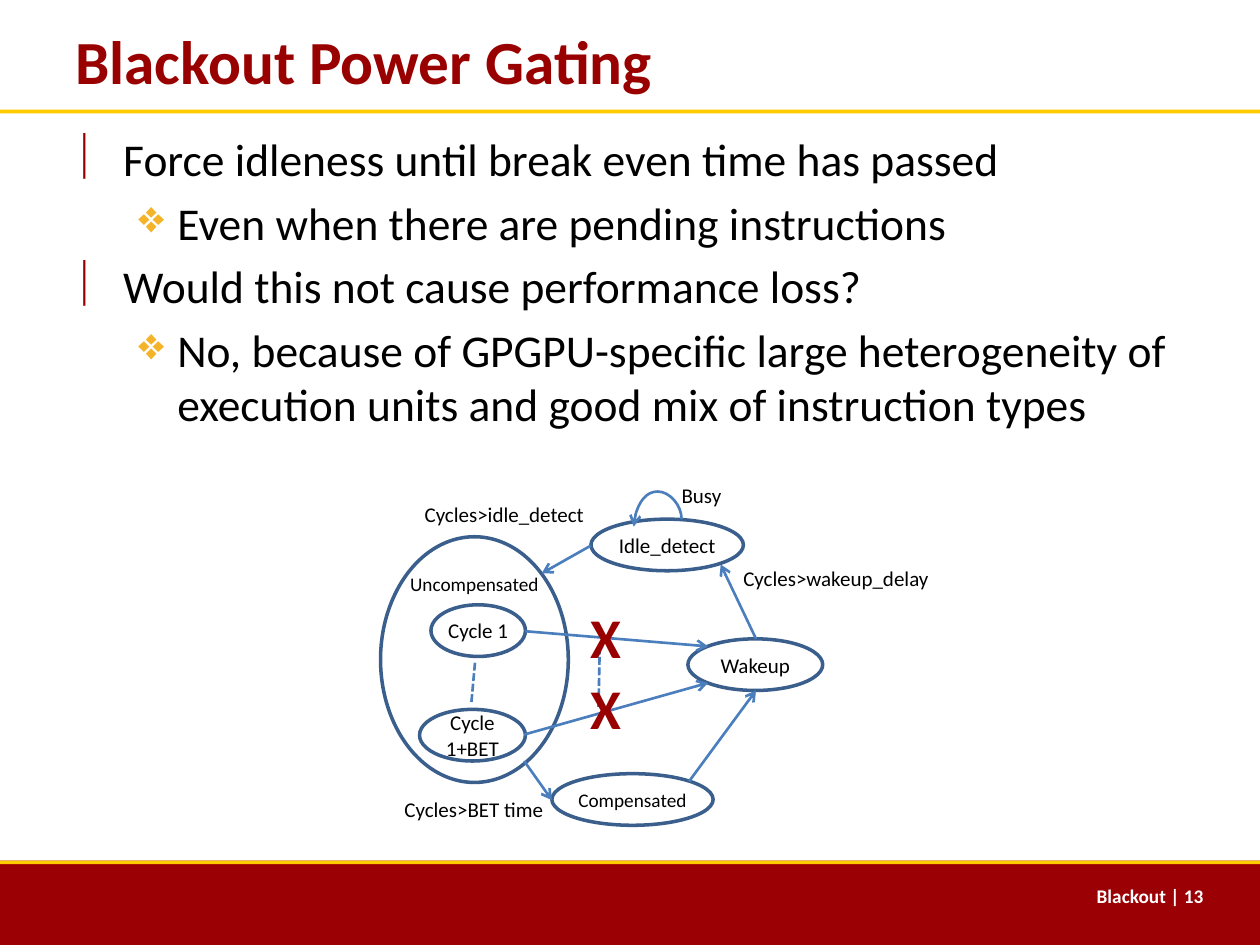
"""Build the Blackout Power Gating slide with its state diagram."""
from dataclasses import dataclass

from lxml import etree
from pptx import Presentation
from pptx.dml.color import RGBColor
from pptx.enum.dml import MSO_LINE
from pptx.enum.shapes import MSO_CONNECTOR, MSO_SHAPE
from pptx.enum.text import MSO_ANCHOR, PP_ALIGN
from pptx.oxml.ns import qn
from pptx.util import Inches, Pt

RECT, OVAL = MSO_SHAPE.RECTANGLE, MSO_SHAPE.OVAL
STRAIGHT, CURVE = MSO_CONNECTOR.STRAIGHT, MSO_CONNECTOR.CURVE
TOP, MIDDLE = MSO_ANCHOR.TOP, MSO_ANCHOR.MIDDLE
LEFT, CENTER, RIGHT = PP_ALIGN.LEFT, PP_ALIGN.CENTER, PP_ALIGN.RIGHT
DASH = MSO_LINE.SQUARE_DOT
COLS, ROWS = 100, 75


@dataclass(frozen=True)
class Theme:
    """Colours, type sizes and line widths of the slide."""
    font: str = "Calibri"
    band: str = "9A0004"
    rule: str = "FFCC00"
    accent: str = "990000"
    diamond: str = "F4B329"
    ink: str = "000000"
    paper: str = "FFFFFF"
    outline: str = "3A5F8C"
    link: str = "4B7EBC"
    title: float = 35
    cross: float = 32
    body: float = 26
    label: float = 12
    small: float = 11
    oval_width: float = 2
    link_width: float = 1.5


T = Theme()

BULLETS = [
    (0, "Force idleness until break even time has passed"),
    (1, "Even when there are pending instructions"),
    (0, "Would this not cause performance loss?"),
    (1, "No, because of GPGPU-specific large heterogeneity of "
        "execution units and good mix of instruction types"),
]
LEVELS = [("|", T.accent, 0.38, -0.38), ("❖", T.diamond, 0.81, -0.31)]

STATES = [
    ("Uncompensated", (30.2, 42.6, 14.9, 19.5), T.small, TOP),
    ("Cycle 1", (34.2, 48, 7.5, 4.1), T.label, MIDDLE),
    ("Cycle 1+BET", (33.3, 56.3, 8.4, 4.1), T.label, MIDDLE),
    ("Wakeup", (54.6, 50.7, 10.7, 4.1), T.label, MIDDLE),
    ("Compensated", (43.8, 61.4, 12.8, 4.1), T.small, MIDDLE),
    ("Idle_detect", (46.9, 41.2, 12.1, 4.1), T.label, MIDDLE),
]
ARROWS = [
    (41.7, 50.1, 56.2, 51.3),
    (41.6, 58.3, 56.2, 54.2),
    (60, 50.7, 57.2, 44.8),
    (54.7, 62, 60, 54.8),
    (46.9, 43.3, 43, 45.5),
    (41.6, 60.4, 43.8, 63.5),
]
DASHES = [(47.6, 51.3, 47.5, 56.2), (37.7, 52.6, 37.4, 55.9)]
LABELS = [
    ("Cycles>wakeup_delay", (59, 44.9, 16.6, 2)),
    ("Cycles>idle_detect", (33.7, 39.8, 14.5, 2)),
    ("Cycles>BET time", (32.1, 63.2, 14.5, 2)),
    ("Busy", (54.1, 38.3, 3.6, 2)),
]


def grid(*cells):
    """Turn alternating columns and rows into slide lengths."""
    steps = (Inches(10) / COLS, Inches(7.5) / ROWS)
    return [round(n * steps[i % 2]) for i, n in enumerate(cells)]


def apply(obj, values):
    """Set each named attribute of an object."""
    for name, value in values.items():
        setattr(obj, name, value)


def add_run(p, text, size, color=T.ink, bold=False):
    """Add a formatted run to a paragraph."""
    r = p.add_run()
    r.text = text
    apply(r.font, {"name": T.font, "size": Pt(size), "bold": bold})
    r.font.color.rgb = RGBColor.from_string(color)


def set_frame(tf, anchor=TOP, wrap=True, inset=True):
    """Set the anchor, wrapping and insets of a text frame."""
    apply(tf, {"word_wrap": wrap, "vertical_anchor": anchor})
    if not inset:
        apply(tf, dict.fromkeys(("margin_left", "margin_top",
                                 "margin_right", "margin_bottom"), 0))


def add_text(s, text, box, size, color=T.ink, bold=False, align=LEFT, **frame):
    """Add a one-paragraph text box."""
    tf = s.shapes.add_textbox(*grid(*box)).text_frame
    set_frame(tf, **frame)
    tf.paragraphs[0].alignment = align
    add_run(tf.paragraphs[0], text, size, color, bold)


def add_bar(s, box, color):
    """Add a plain filled bar."""
    sp = s.shapes.add_shape(RECT, *grid(*box))
    sp.shadow.inherit = False
    sp.fill.solid()
    sp.fill.fore_color.rgb = RGBColor.from_string(color)
    sp.line.fill.background()


def add_bullets(s, box):
    """Add the two-level bullet list."""
    tf = s.shapes.add_textbox(*grid(*box)).text_frame
    set_frame(tf)
    for i, (level, text) in enumerate(BULLETS):
        char, color, margin, indent = LEVELS[level]
        p = tf.add_paragraph() if i else tf.paragraphs[0]
        p.level = level
        p.space_before = Pt(5.2 if i else 0)
        pPr = p._p.get_or_add_pPr()
        pPr.set("marL", str(Inches(margin)))
        pPr.set("indent", str(Inches(indent)))
        clr = etree.SubElement(pPr, qn("a:buClr"))
        etree.SubElement(clr, qn("a:srgbClr"), val=color)
        etree.SubElement(pPr, qn("a:buChar"), char=char)
        add_run(p, text, T.body)


def add_state(s, text, box, size, anchor):
    """Add an outlined state ellipse."""
    sp = s.shapes.add_shape(OVAL, *grid(*box))
    sp.shadow.inherit = False
    sp.fill.background()
    sp.line.color.rgb = RGBColor.from_string(T.outline)
    sp.line.width = Pt(T.oval_width)
    set_frame(sp.text_frame, anchor, inset=False)
    p = sp.text_frame.paragraphs[0]
    p.alignment = CENTER
    add_run(p, text, size)


def add_link(s, ends, kind=STRAIGHT, dashed=False):
    """Add a dashed line or an arrow between two points."""
    c = s.shapes.add_connector(kind, *grid(*ends))
    c.line.color.rgb = RGBColor.from_string(T.link)
    c.line.width = Pt(T.link_width)
    spPr = c._element.spPr
    if dashed:
        c.line.dash_style = DASH
    else:
        etree.SubElement(spPr.find(qn("a:ln")), qn("a:tailEnd"), type="arrow")
    etree.SubElement(spPr, qn("a:effectLst"))
    return c


def add_loop(s, ends, bulge):
    """Add a curved arrow turned upright, bulging by a share of its width."""
    spPr = add_link(s, ends, CURVE)._element.spPr
    spPr.find(qn("a:xfrm")).set("rot", str(270 * 60000))
    av = spPr.find(qn("a:prstGeom")).find(qn("a:avLst"))
    etree.SubElement(av, qn("a:gd"), name="adj1",
                     fmla=f"val {round(bulge * 100000)}")


def add_diagram(s):
    """Draw the states, their transitions and the crossed-out paths."""
    for state in STATES:
        add_state(s, *state)
    for ends in ARROWS:
        add_link(s, ends)
    for ends in DASHES:
        add_link(s, ends, dashed=True)
    add_loop(s, (52.5, 43.4, 51.9, 39.6), -3.66)
    for text, box in LABELS:
        add_text(s, text, box, T.label, inset=False)
    for row in (45.5, 51.1):
        add_text(s, "X", (43.1, row, 10, 10), T.cross, T.accent, True, CENTER,
                 anchor=MIDDLE, wrap=False)


def main():
    """Build and save the slide."""
    prs = Presentation()
    apply(prs, {"slide_width": Inches(10), "slide_height": Inches(7.5)})
    s = prs.slides.add_slide(prs.slide_layouts[6])
    add_bar(s, (0, 68.3, COLS, 6.7), T.band)
    for row in (68.3, 8.7):
        add_bar(s, (0, row, COLS, 0.3), T.rule)
    add_text(s, "Blackout Power Gating", (5, 0.8, 90, 7.9), T.title, T.accent,
             True, anchor=MIDDLE)
    add_bullets(s, (5, 9.9, 90, 58.4))
    add_text(s, "Blackout | 13", (78.7, 69.7, 17.8, 3.5), T.small, T.paper,
             True, RIGHT)
    add_diagram(s)
    prs.save("out.pptx")


if __name__ == "__main__":
    main()
